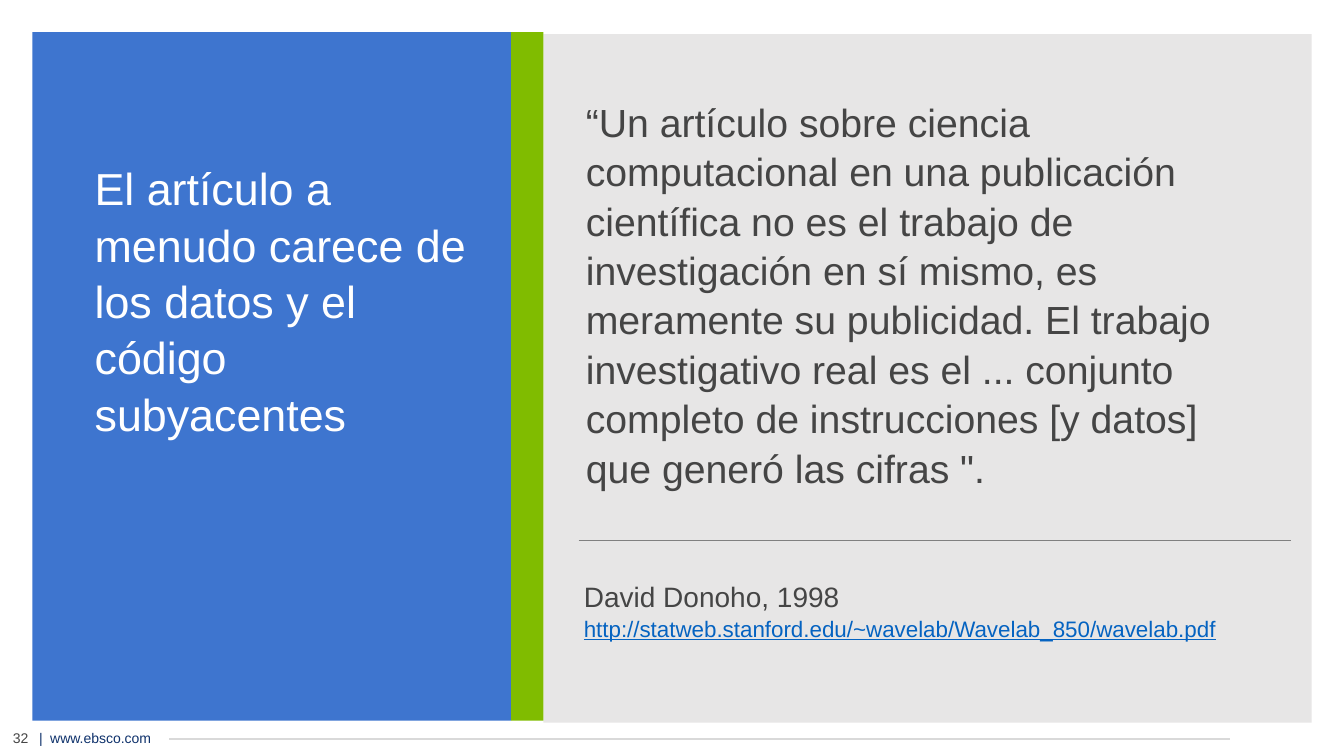
import pptx
import pptx.util
import pptx.dml.color
import pptx.enum.shapes
import pptx.enum.text
import pptx.oxml.ns
from lxml import etree

Inches = pptx.util.Inches
RGBColor = pptx.dml.color.RGBColor
PP_ALIGN = pptx.enum.text.PP_ALIGN
MSO_ANCHOR = pptx.enum.text.MSO_ANCHOR

WHITE = RGBColor(0xFF, 0xFF, 0xFF)
BLUE = RGBColor(0x3E, 0x75, 0xCF)
GREEN = RGBColor(0x80, 0xBC, 0x00)
LIGHT = RGBColor(0xE7, 0xE6, 0xE6)
TEXT = RGBColor(0x45, 0x45, 0x45)
NAVY = RGBColor(0x0E, 0x31, 0x6B)
LINK = RGBColor(0x05, 0x63, 0xC1)
RULE = RGBColor(0x80, 0x80, 0x80)
FOOTER_RULE = RGBColor(0xD9, 0xD9, 0xD9)

TITLE = "El artículo a menudo carece de los datos y el código subyacentes"
QUOTE = (
    "“Un artículo sobre ciencia computacional en una publicación científica "
    "no es el trabajo de investigación en sí mismo, es meramente su publicidad. "
    "El trabajo investigativo real es el ... conjunto completo de instrucciones "
    '[y datos] que generó las cifras ".'
)
AUTHOR = "David Donoho, 1998"
URL = "http://statweb.stanford.edu/~wavelab/Wavelab_850/wavelab.pdf"


def add_text_box(slide, x, y, w, h, anchor=MSO_ANCHOR.TOP, inset=None):
    sp = slide.shapes.add_textbox(Inches(x), Inches(y), Inches(w), Inches(h))
    tf = sp.text_frame
    tf.word_wrap = True
    tf.vertical_anchor = anchor
    if inset is not None:
        tf.margin_left = tf.margin_right = Inches(inset)
        tf.margin_top = tf.margin_bottom = Inches(inset)
    return tf


def add_text(tf, text, size, color, align=PP_ALIGN.LEFT, spacing=1.05,
             underline=None, tab=None):
    p = tf.paragraphs[0]
    if p.runs:
        p = tf.add_paragraph()
    p.alignment = align
    p.line_spacing = spacing
    if tab is not None:
        qn = pptx.oxml.ns.qn
        tabs = etree.SubElement(p._p.get_or_add_pPr(), qn("a:tabLst"))
        etree.SubElement(tabs, qn("a:tab"), pos=str(Inches(tab)), algn="l")
    r = p.add_run()
    r.text = text
    r.font.name = "Arial"
    r.font.size = pptx.util.Pt(size)
    r.font.color.rgb = color
    r.font.underline = underline


def add_panel(slide, x, y, w, h, color):
    sp = slide.shapes.add_shape(pptx.enum.shapes.MSO_SHAPE.RECTANGLE,
                                Inches(x), Inches(y), Inches(w), Inches(h))
    sp.shadow.inherit = False
    sp.fill.solid()
    sp.fill.fore_color.rgb = color
    sp.line.fill.background()


def add_rule(slide, x, y, w, color):
    line = slide.shapes.add_connector(pptx.enum.shapes.MSO_CONNECTOR.STRAIGHT,
                                      Inches(x), Inches(y), Inches(x + w), Inches(y))
    line.line.color.rgb = color
    line.line.width = pptx.util.Pt(1)
    etree.SubElement(line._element.spPr, pptx.oxml.ns.qn("a:effectLst"))


def add_footer(slide, x, y, w, h):
    tf = add_text_box(slide, x + 0.33, y, 1.94, h)
    add_text(tf, "|\twww.ebsco.com", 10, NAVY, spacing=1, tab=0.11)
    tf = add_text_box(slide, x, y, 0.49, h, anchor=MSO_ANCHOR.MIDDLE)
    add_text(tf, "32", 10, TEXT, align=PP_ALIGN.CENTER, spacing=1)
    add_rule(slide, x + 1.72, y + 0.14, w - 1.72, FOOTER_RULE)


def add_title_panel(slide, x, y, w, h, band=0.32):
    add_panel(slide, x, y, w - band, h, BLUE)
    add_panel(slide, x + w - band, y, band, h, GREEN)
    tf = add_text_box(slide, x + 0.52, y + 1.2, 4.07, 2.79)
    add_text(tf, TITLE, 32, WHITE)


def add_quote_panel(slide, x, y, w, h):
    add_panel(slide, x, y, w, h, LIGHT)
    tf = add_text_box(slide, x + 0.35, y + 0.39, 6.85, 4.36,
                      anchor=MSO_ANCHOR.MIDDLE, inset=0.07)
    add_text(tf, QUOTE, 28, TEXT)
    add_rule(slide, x + 0.35, y + 5.02, w - 0.56, RULE)
    tf = add_text_box(slide, x + 0.33, y + 5.33, 6.95, 0.76,
                      anchor=MSO_ANCHOR.MIDDLE, inset=0.07)
    add_text(tf, AUTHOR, 20, TEXT)
    add_text(tf, URL, 16, LINK, underline=True)


def main():
    prs = pptx.Presentation()
    prs.slide_width = Inches(13.33)
    prs.slide_height = Inches(7.5)
    slide = prs.slides.add_slide(prs.slide_layouts[6])
    add_footer(slide, -0.04, 7.19, 12.24, 0.27)
    add_quote_panel(slide, 5.39, 0.34, 7.62, 6.83)
    add_title_panel(slide, 0.32, 0.32, 5.07, 6.83)
    prs.save("out.pptx")


if __name__ == "__main__":
    main()
